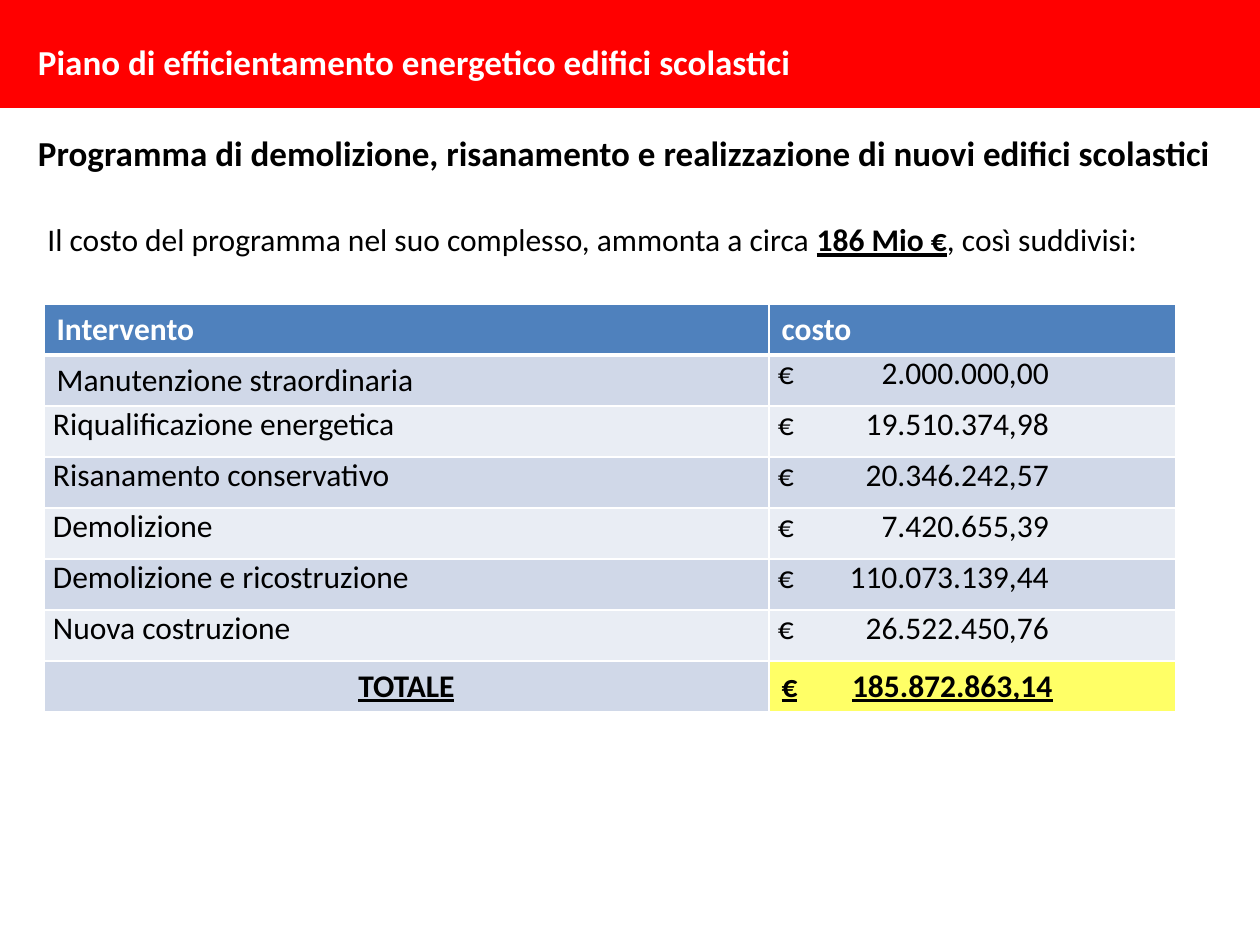
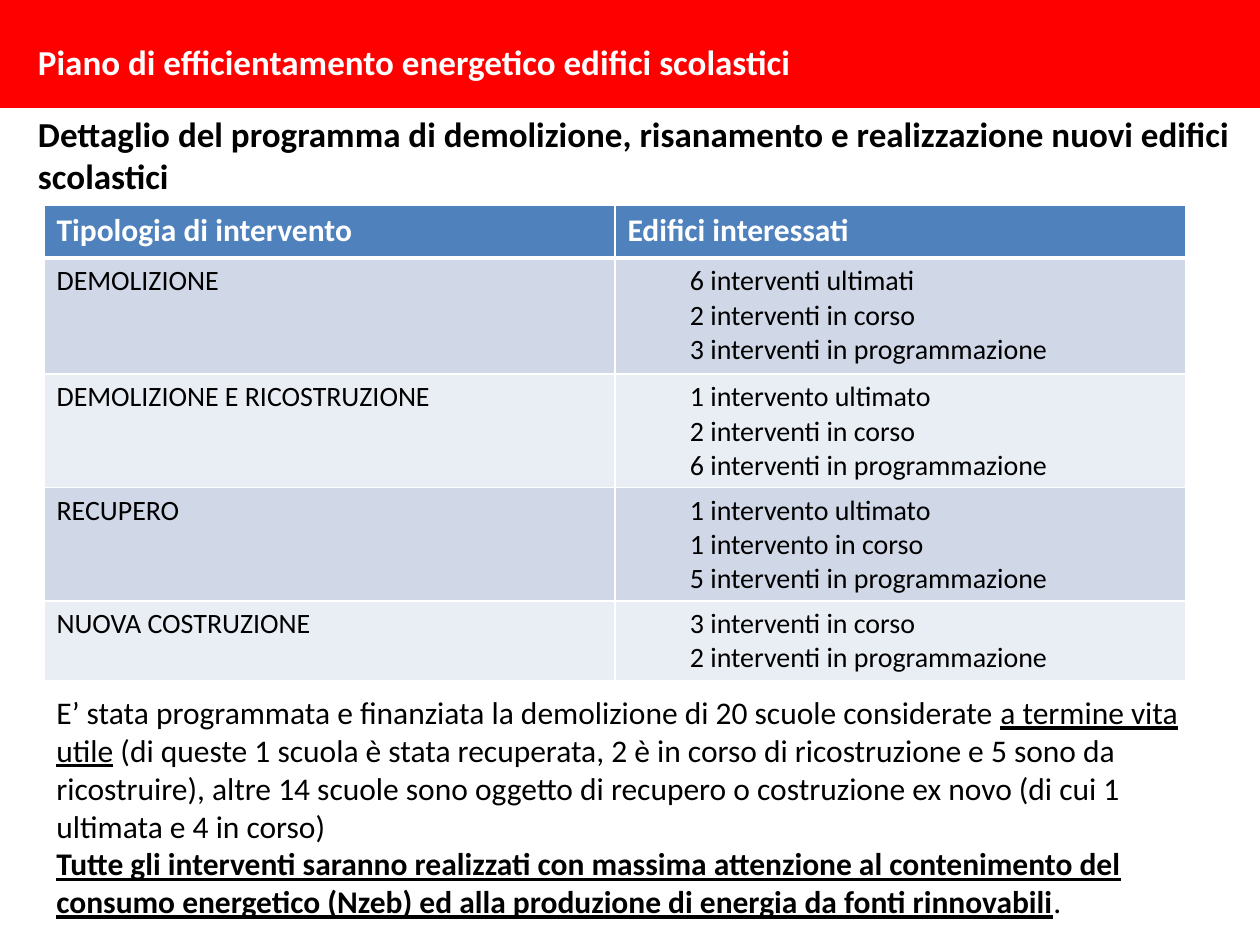
"""Build two slides on the cost and detail of a school building programme."""
import pptx
import pptx.dml.color
import pptx.enum.text
import pptx.oxml
import pptx.oxml.ns
import pptx.util

PX_PER_INCH = 126
FONT = "Calibri"
RED, WHITE, BLACK, BLUE, YELLOW = "FF0000", "FFFFFF", "000000", "4F81BD", "FFFF66"
BANDS = ["D0D8E8", "E9EDF4"]
LEFT = pptx.enum.text.PP_ALIGN.LEFT
CENTER = pptx.enum.text.PP_ALIGN.CENTER
TITLE_INDENT, TIGHT, DETAIL_INDENT, AMOUNT_TAB = 38, 9, 75, 271

PLAN = "Piano di efficientamento energetico edifici scolastici"

COST_HEADING = "Programma di demolizione, risanamento e realizzazione di nuovi edifici scolastici"
COST_INTRO = [[
    ("Il costo del programma nel suo complesso, ammonta a circa ", ""),
    ("186 Mio €", "bu"),
    (", così suddivisi:", ""),
]]
COSTS = [
    ("Intervento", "costo"),
    ("Manutenzione straordinaria", "€\t2.000.000,00"),
    ("Riqualificazione energetica", "€\t19.510.374,98"),
    ("Risanamento conservativo", "€\t20.346.242,57"),
    ("Demolizione", "€\t7.420.655,39"),
    ("Demolizione e ricostruzione", "€\t110.073.139,44"),
    ("Nuova costruzione", "€\t26.522.450,76"),
    ("TOTALE", "€\t185.872.863,14"),
]

DETAIL_HEADING = ("Dettaglio del programma di demolizione, risanamento e realizzazione "
                  "nuovi edifici scolastici")
DETAILS = [
    ("Tipologia di intervento", "Edifici interessati"),
    ("DEMOLIZIONE",
     "6 interventi ultimati\n2 interventi in corso\n3 interventi in programmazione"),
    ("DEMOLIZIONE E RICOSTRUZIONE",
     "1 intervento ultimato\n2 interventi in corso\n6 interventi in programmazione"),
    ("RECUPERO",
     "1 intervento ultimato\n1 intervento in corso\n5 interventi in programmazione"),
    ("NUOVA COSTRUZIONE",
     "3 interventi in corso\n2 interventi in programmazione"),
]
DETAIL_NOTE = [
    [
        ("E’ stata programmata e finanziata la demolizione di 20 scuole considerate ", ""),
        ("a termine vita utile", "u"),
        (" (di queste 1 scuola è stata recuperata, 2 è in corso di ricostruzione e 5 sono "
         "da ricostruire), altre 14 scuole sono oggetto di recupero o costruzione ex novo "
         "(di cui 1 ultimata e 4 in corso)", ""),
    ],
    [
        ("Tutte gli interventi saranno realizzati con massima attenzione al contenimento del "
         "consumo energetico (Nzeb) ed alla produzione di energia da fonti rinnovabili", "bu"),
        (".", ""),
    ],
]


def px(length):
    return pptx.util.Emu(round(length * 914400 / PX_PER_INCH))


def paint(fill, color):
    fill.solid()
    fill.fore_color.rgb = pptx.dml.color.RGBColor.from_string(color)


def style_run(run, size, color, style=""):
    run.font.name = FONT
    run.font.size = pptx.util.Pt(size)
    run.font.color.rgb = pptx.dml.color.RGBColor.from_string(color)
    run.font.bold = "b" in style
    run.font.underline = "u" in style


def style_frame(frame, size, color, style="", align=LEFT):
    for paragraph in frame.paragraphs:
        paragraph.alignment = align
        for run in paragraph.runs:
            style_run(run, size, color, style)


def add_text(slide, box, paragraphs, size=18):
    frame = slide.shapes.add_textbox(*map(px, box)).text_frame
    frame.word_wrap = True
    for index, pieces in enumerate(paragraphs):
        paragraph = frame.add_paragraph() if index else frame.paragraphs[0]
        for text, style in pieces:
            run = paragraph.add_run()
            run.text = text
            style_run(run, size, BLACK, style)
    return frame


def add_slide(deck, heading, heading_top, heading_height):
    slide = deck.slides.add_slide(deck.slide_layouts[5])
    title = slide.shapes.title
    title.left, title.top, title.width, title.height = map(px, (0, 0, 1260, 108))
    paint(title.fill, RED)
    frame = title.text_frame
    frame.text = PLAN
    frame.auto_size = pptx.enum.text.MSO_AUTO_SIZE.NONE
    frame.vertical_anchor = pptx.enum.text.MSO_ANCHOR.MIDDLE
    frame.margin_left, frame.margin_top, frame.margin_bottom = map(px, (TITLE_INDENT, 20, 6))
    style_frame(frame, 20, WHITE, "b")
    box = (0, heading_top, 1260, heading_height)
    add_text(slide, box, [[(heading, "b")]], 20).margin_left = px(TITLE_INDENT)
    return slide


def border_cell(cell, bottom_width):
    properties = cell._tc.get_or_add_tcPr()
    for side in "LRTB":
        width = pptx.util.Pt(bottom_width if side == "B" else 1)
        properties.append(pptx.oxml.parse_xml(
            f'<a:ln{side} {pptx.oxml.ns.nsdecls("a")} w="{width}"><a:solidFill>'
            f'<a:srgbClr val="{WHITE}"/></a:solidFill></a:ln{side}>'))


def set_amount_tab(paragraph):
    paragraph._p.get_or_add_pPr().append(pptx.oxml.parse_xml(
        f'<a:tabLst {pptx.oxml.ns.nsdecls("a")}>'
        f'<a:tab pos="{px(AMOUNT_TAB)}" algn="r"/></a:tabLst>'))


def add_grid(slide, left, top, widths, heights, rows, body_size):
    grid = slide.shapes.add_table(
        len(rows), len(widths), *map(px, (left, top, sum(widths), sum(heights)))).table
    grid.horz_banding = False
    for column, width in zip(grid.columns, widths):
        column.width = px(width)
    for r, (row, height) in enumerate(zip(rows, heights)):
        grid.rows[r].height = px(height)
        for c, text in enumerate(row):
            cell = grid.cell(r, c)
            cell.text_frame.text = text
            border_cell(cell, 1 if r else 3)
            paint(cell.fill, BANDS[(r - 1) % 2] if r else BLUE)
            if r:
                style_frame(cell.text_frame, body_size, BLACK)
            else:
                style_frame(cell.text_frame, 18, WHITE, "b")
    return grid


def build_costs(deck):
    slide = add_slide(deck, COST_HEADING, 125, 55)
    add_text(slide, (35, 214, 1181, 50), COST_INTRO)
    grid = add_grid(slide, 44, 304, [725, 407], [51] * len(COSTS), COSTS, 18)
    total = len(COSTS) - 1
    for r in range(1, len(COSTS)):
        for c in range(2):
            cell = grid.cell(r, c)
            if r < total and (r, c) != (1, 0):
                cell.margin_left = cell.margin_right = px(TIGHT)
                cell.margin_top = cell.margin_bottom = 0
            if r == total:
                style_frame(cell.text_frame, 18, BLACK, "bu", LEFT if c else CENTER)
        set_amount_tab(grid.cell(r, 1).text_frame.paragraphs[0])
    paint(grid.cell(total, 1).fill, YELLOW)


def build_details(deck):
    slide = add_slide(deck, DETAIL_HEADING, 106, 97)
    add_text(slide, (44, 687, 1181, 242), DETAIL_NOTE)
    grid = add_grid(slide, 44, 205, [571, 571], [53, 116, 113, 113, 79], DETAILS, 16)
    for r in range(1, len(DETAILS)):
        grid.cell(r, 1).margin_left = px(DETAIL_INDENT)


def main():
    deck = pptx.Presentation()
    deck.slide_width, deck.slide_height = px(1260), px(945)
    build_costs(deck)
    build_details(deck)
    deck.save("out.pptx")


if __name__ == "__main__":
    main()
